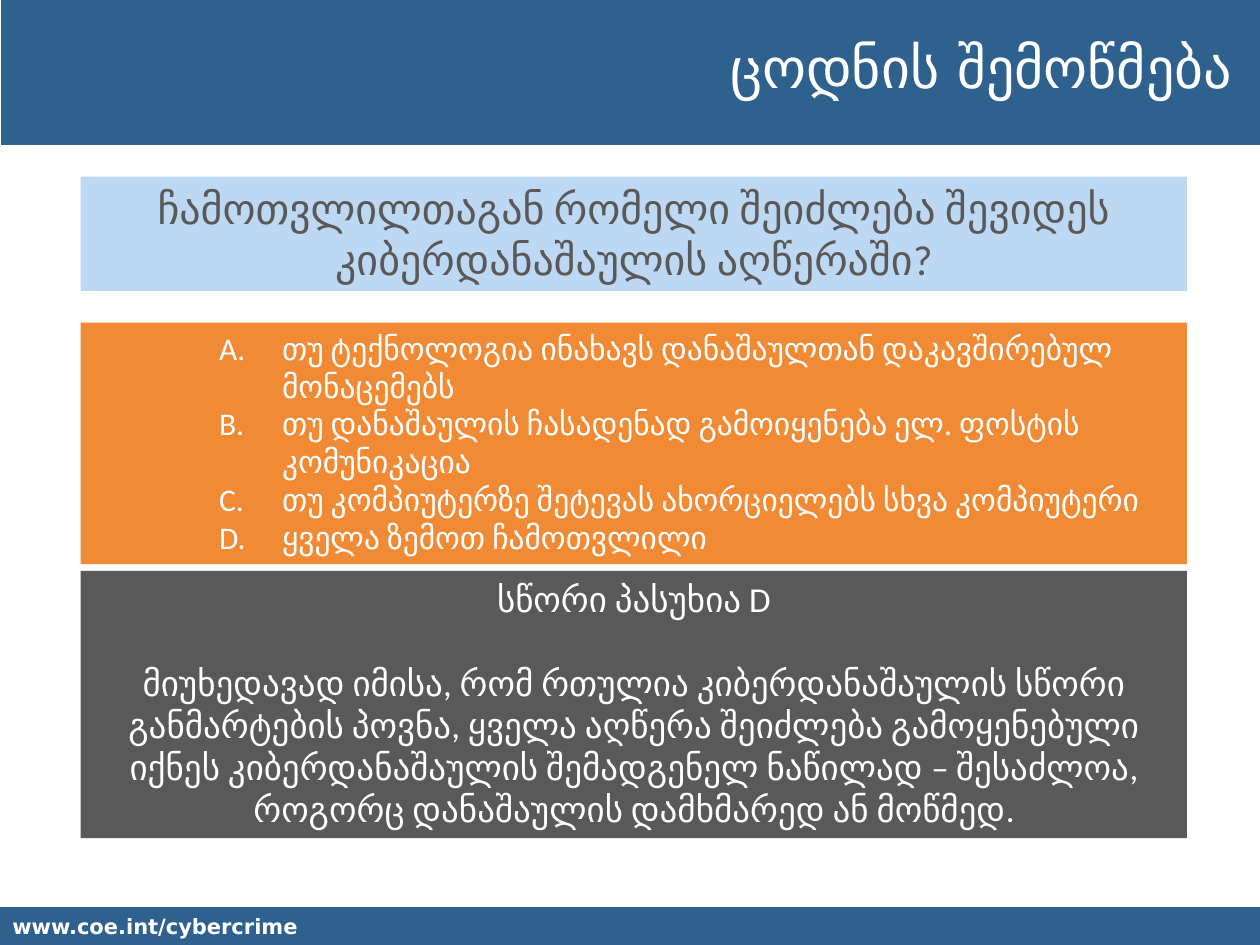
from lxml import etree
from pptx import Presentation
from pptx.dml.color import RGBColor
from pptx.enum import shapes, text
from pptx.oxml.ns import qn
from pptx.util import Pt

BLUE = RGBColor(0x2F, 0x61, 0x8F)
PALE = RGBColor(0xBD, 0xD8, 0xF3)
ORANGE = RGBColor(0xF0, 0x8A, 0x34)
GREY = RGBColor(0x59, 0x59, 0x59)
WHITE = RGBColor(0xFF, 0xFF, 0xFF)

LEFT, WIDTH = 46.1, 632.2
HEAD, BODY = "DejaVu Sans", "Calibri"

TITLE = ["ცოდნის შემოწმება"]
SITE = ["www.coe.int/cybercrime"]
QUERY = ["ჩამოთვლილთაგან რომელი შეიძლება შევიდეს კიბერდანაშაულის აღწერაში?"]
CHOICES = [
    "თუ ტექნოლოგია ინახავს დანაშაულთან დაკავშირებულ მონაცემებს",
    "თუ დანაშაულის ჩასადენად გამოიყენება ელ. ფოსტის კომუნიკაცია",
    "თუ კომპიუტერზე შეტევას ახორციელებს სხვა კომპიუტერი",
    "ყველა ზემოთ ჩამოთვლილი",
]
ANSWER = [
    "სწორი პასუხია D",
    "მიუხედავად იმისა, რომ რთულია კიბერდანაშაულის სწორი განმარტების პოვნა, "
    "ყველა აღწერა შეიძლება გამოყენებული იქნეს კიბერდანაშაულის შემადგენელ "
    "ნაწილად – შესაძლოა, როგორც დანაშაულის დამხმარედ ან მოწმედ.",
]

prs = Presentation()
prs.slide_width, prs.slide_height = Pt(720), Pt(540)
slide = prs.slides.add_slide(prs.slide_layouts[6])


def add_bar(left, top, width, height, fill):
    bar = slide.shapes.add_shape(shapes.MSO_SHAPE.RECTANGLE,
                                 Pt(left), Pt(top), Pt(width), Pt(height))
    bar.shadow.inherit = False
    bar.fill.solid()
    bar.fill.fore_color.rgb = fill
    bar.line.fill.background()
    return bar


def number(par):
    """Letter the paragraph A., B., C. with a hanging indent."""
    par.level = 2
    props = par._p.get_or_add_pPr()
    props.set("marL", str(Pt(108)))
    props.set("indent", str(Pt(-36)))
    etree.SubElement(props, qn("a:buFont"), typeface="+mj-lt")
    etree.SubElement(props, qn("a:buAutoNum"), type="alphaUcPeriod")


def write(shape, lines, size, color, align, face=BODY, bold=False,
          anchor=text.MSO_ANCHOR.TOP, gap=0, listed=False):
    frame = shape.text_frame
    frame.word_wrap = True
    frame.vertical_anchor = anchor
    for i, line in enumerate(lines):
        par = frame.paragraphs[0] if i == 0 else frame.add_paragraph()
        par.text = line
        par.alignment = align
        if i and gap:
            par.space_before = Pt(gap)
        if listed:
            number(par)
        font = par.font
        font.name, font.size, font.bold = face, Pt(size), bold
        font.color.rgb = color


start, mid, end = (text.PP_ALIGN.LEFT, text.PP_ALIGN.CENTER,
                   text.PP_ALIGN.RIGHT)

add_bar(0.7, -2.2, 719.3, 85, BLUE)
title = slide.shapes.add_textbox(Pt(110.2), Pt(15.1), Pt(601.2), Pt(46.1))
write(title, TITLE, 32, WHITE, end, HEAD)

foot = add_bar(0, 518.4, 720, 21.6, BLUE)
write(foot, SITE, 12, WHITE, start, HEAD, bold=True,
      anchor=text.MSO_ANCHOR.MIDDLE)

query = add_bar(LEFT, 100.9, WIDTH, 65.4, PALE)
write(query, QUERY, 24, GREY, mid)

answer = add_bar(LEFT, 326.2, WIDTH, 152.7, GREY)
write(answer, ANSWER, 20, WHITE, mid, gap=24)

choices = add_bar(LEFT, 184.4, WIDTH, 138, ORANGE)
write(choices, CHOICES, 18, WHITE, start, listed=True)

prs.save("out.pptx")
